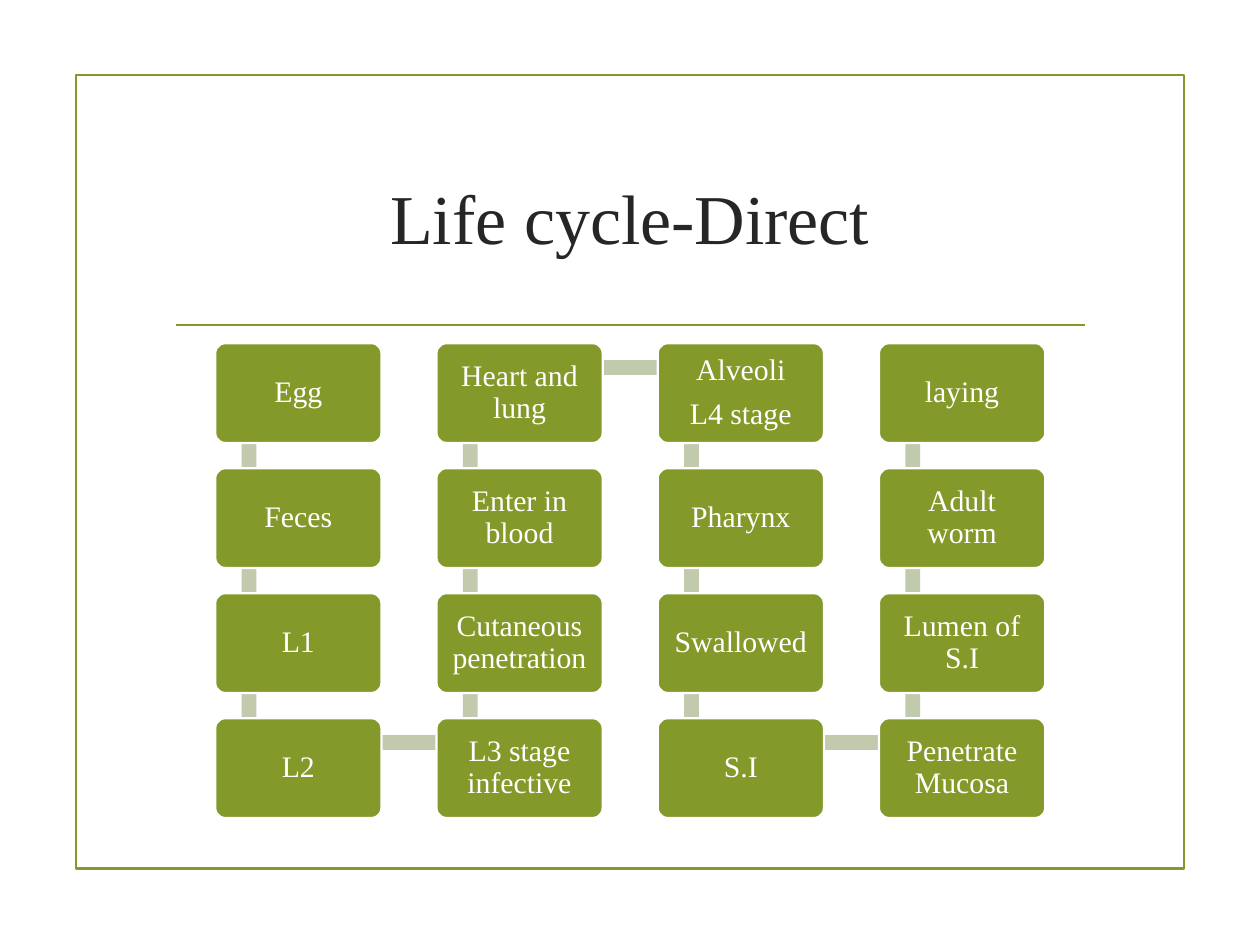
from dataclasses import dataclass
from itertools import pairwise

import pptx
import pptx.dml.color
import pptx.enum.shapes
import pptx.enum.text
import pptx.oxml
import pptx.util

Cm = pptx.util.Cm
Pt = pptx.util.Pt
Shapes = pptx.enum.shapes.MSO_SHAPE

GREEN, PALE, WHITE, INK = "83992A", "C1CAAD", "FFFFFF", "262626"
FONT = "Times New Roman"
ROWS = 4
GRID_LEFT, GRID_TOP = 4.34, 6.92
COLUMN_PITCH, ROW_PITCH = 4.46, 2.52
BOX_WIDTH, BOX_HEIGHT = 3.35, 2.01
LINK_THICKNESS = 0.3

STAGES = [
    "Egg", "Feces", "L1", "L2",
    "L3 stage infective", "Cutaneous penetration", "Enter in blood", "Heart and lung",
    "Alveoli\nL4 stage", "Pharynx", "Swallowed", "S.I",
    "Penetrate Mucosa", "Lumen of S.I", "Adult worm", "laying",
]


@dataclass
class Stage:
    text: str
    column: int
    row: int

    @property
    def left(self) -> float:
        return GRID_LEFT + self.column * COLUMN_PITCH

    @property
    def top(self) -> float:
        return GRID_TOP + self.row * ROW_PITCH


def colour(value: str):
    return pptx.dml.color.RGBColor.from_string(value)


def apply(target, settings: dict) -> None:
    for name, value in settings.items():
        setattr(target, name, value)


def add_block(page, kind, left: float, top: float, width: float, height: float,
              fill: str | None = None, line: str | None = None):
    block = page.shapes.add_shape(kind, Cm(left), Cm(top), Cm(width), Cm(height))
    block.shadow.inherit = False
    if fill:
        block.fill.solid()
        block.fill.fore_color.rgb = colour(fill)
    else:
        block.fill.background()
    if line:
        block.line.color.rgb = colour(line)
        block.line.width = Pt(1.25)
    else:
        block.line.fill.background()
    return block


def write_text(box, text: str, size: float, ink: str, inset: float, paragraph_format: dict) -> None:
    frame = box.text_frame
    margins = {f"margin_{side}": Cm(inset) for side in ("left", "right", "top", "bottom")}
    apply(frame, {"word_wrap": True,
                  "vertical_anchor": pptx.enum.text.MSO_ANCHOR.MIDDLE, **margins})
    frame.text = text
    for para in frame.paragraphs:
        apply(para, {"alignment": pptx.enum.text.PP_ALIGN.CENTER, **paragraph_format})
        for span in para.runs:
            apply(span.font, {"name": FONT, "size": Pt(size)})
            span.font.color.rgb = colour(ink)


def add_rule(page, left: float, right: float, top: float) -> None:
    rule = page.shapes.add_connector(pptx.enum.shapes.MSO_CONNECTOR.STRAIGHT,
                                     Cm(left), Cm(top), Cm(right), Cm(top))
    rule.line.color.rgb = colour(GREEN)
    rule.line.width = Pt(1.25)
    properties = rule.line._get_or_add_ln().getparent()
    properties.append(pptx.oxml.parse_xml(
        '<a:effectLst xmlns:a="http://schemas.openxmlformats.org/drawingml/2006/main"/>'))


def add_link(page, start: Stage, end: Stage) -> None:
    if start.column == end.column:
        upper = min(start, end, key=lambda stage: stage.row)
        area = (upper.left + 0.53, upper.top + 0.52, LINK_THICKNESS, ROW_PITCH)
    else:
        area = (start.left + 0.68, start.top + 0.34, COLUMN_PITCH, LINK_THICKNESS)
    add_block(page, Shapes.RECTANGLE, *area, fill=PALE)


def add_stage(page, stage: Stage) -> None:
    box = add_block(page, Shapes.ROUNDED_RECTANGLE, stage.left, stage.top,
                    BOX_WIDTH, BOX_HEIGHT, fill=GREEN, line=WHITE)
    box.adjustments[0] = 0.1
    write_text(box, stage.text, 17, WHITE, 0.18, {"line_spacing": 0.9, "space_after": Pt(7)})


def snake(texts: list[str]) -> list[Stage]:
    stages = []
    for index, text in enumerate(texts):
        column, step = divmod(index, ROWS)
        row = ROWS - 1 - step if column % 2 else step
        stages.append(Stage(text, column, row))
    return stages


def main() -> None:
    deck = pptx.Presentation()
    apply(deck, {"slide_width": Cm(25.4), "slide_height": Cm(19.05)})
    page = deck.slides.add_slide(deck.slide_layouts[6])

    add_block(page, Shapes.RECTANGLE, 1.54, 1.51, 22.33, 16, line=GREEN)
    add_rule(page, 3.55, 21.88, 6.55)
    title = page.shapes.add_textbox(Cm(3.25), Cm(2.54), Cm(18.9), Cm(3.63))
    write_text(title, "Life cycle-Direct", 40, INK, 0.13, {})

    stages = snake(STAGES)
    for start, end in pairwise(stages):
        add_link(page, start, end)
    for stage in stages:
        add_stage(page, stage)

    deck.save("out.pptx")


if __name__ == "__main__":
    main()
